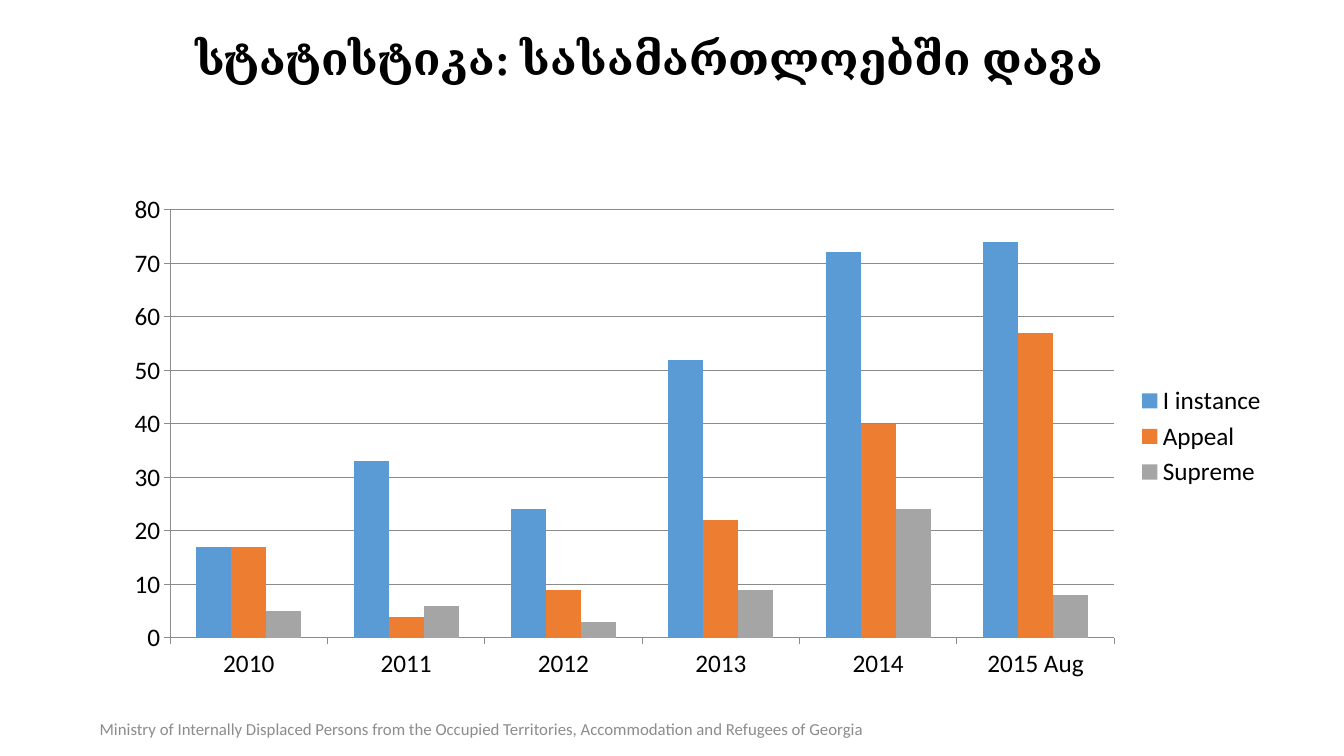
from dataclasses import dataclass

from lxml.etree import SubElement
from pptx import Presentation
from pptx.chart.chart import Chart
from pptx.chart.data import CategoryChartData
from pptx.dml.color import RGBColor
from pptx.enum.chart import XL_CHART_TYPE as ChartType, XL_LEGEND_POSITION as LegendPos
from pptx.enum.chart import XL_TICK_MARK as Tick
from pptx.enum.text import MSO_ANCHOR as Anchor, MSO_AUTO_SIZE as AutoSize, PP_ALIGN as Align
from pptx.oxml.ns import qn
from pptx.util import Inches, Pt

COLORS = {
    "text": "000000",
    "footer": "8C8C8C",
    "grid": "8B8B8B",
    "first": "5B9BD5",
    "appeal": "ED7D31",
    "supreme": "A5A5A5",
}
YEARS = ("2010", "2011", "2012", "2013", "2014", "2015 Aug")


@dataclass(frozen=True)
class Court:
    name: str
    cases: tuple[int, ...]
    color: str


COURTS = (
    Court("I instance", (17, 33, 24, 52, 72, 74), "first"),
    Court("Appeal", (17, 4, 9, 22, 40, 57), "appeal"),
    Court("Supreme", (5, 6, 3, 9, 24, 8), "supreme"),
)


def rgb(name: str) -> RGBColor:
    return RGBColor.from_string(COLORS[name])


def box(left: float, top: float, width: float, height: float) -> tuple:
    return tuple(Inches(v) for v in (left, top, width, height))


def write(sp, text: str, *, size: float, color: str, font: str = "Calibri",
          bold: bool = False, align=Align.LEFT) -> None:
    tf = sp.text_frame
    tf.word_wrap = True
    tf.auto_size = AutoSize.NONE
    tf.vertical_anchor = Anchor.TOP
    p = tf.paragraphs[0]
    p.alignment = align
    r = p.add_run()
    r.text = text
    r.font.size = Pt(size)
    r.font.name = font
    r.font.bold = bold
    r.font.color.rgb = rgb(color)


def set_plot_area(chart: Chart, **fractions: float) -> None:
    """Fix the inner plot area, as fractions of the chart frame."""
    area = chart.element.find(".//" + qn("c:plotArea"))
    layout = area.find(qn("c:layout"))
    if layout is None:
        layout = SubElement(area, qn("c:layout"))
        area.insert(0, layout)
    manual = SubElement(layout, qn("c:manualLayout"))
    settings = {"layoutTarget": "inner", "xMode": "edge", "yMode": "edge", **fractions}
    for tag, value in settings.items():
        SubElement(manual, qn(f"c:{tag}")).set("val", str(value))


def add_court_chart(slide) -> None:
    data = CategoryChartData()
    data.categories = YEARS
    for court in COURTS:
        data.add_series(court.name, court.cases)
    chart = slide.shapes.add_chart(
        ChartType.COLUMN_CLUSTERED, *box(1.11, 1.83, 11.56, 5), data).chart
    chart.has_title = False
    chart.font.size = Pt(18)
    chart.font.name = "Calibri"
    chart.font.color.rgb = rgb("text")

    chart.has_legend = True
    chart.legend.position = LegendPos.RIGHT
    chart.legend.include_in_layout = False

    plot = chart.plots[0]
    plot.gap_width = 150
    plot.overlap = 0
    plot.vary_by_categories = False
    for series, court in zip(plot.series, COURTS):
        series.format.fill.solid()
        series.format.fill.fore_color.rgb = rgb(court.color)

    values = chart.value_axis
    values.minimum_scale, values.maximum_scale, values.major_unit = 0, 80, 10
    values.has_major_gridlines = True
    for axis in (chart.category_axis, values):
        axis.major_tick_mark = Tick.OUTSIDE
        axis.minor_tick_mark = Tick.NONE
    for item in (chart.category_axis, values, values.major_gridlines):
        item.format.line.color.rgb = rgb("grid")
        item.format.line.width = Pt(0.75)
    set_plot_area(chart, x=0.05, y=0.05, w=0.81, h=0.85)


def main() -> None:
    prs = Presentation()
    prs.slide_width, prs.slide_height = Inches(13.33), Inches(7.5)
    slide = prs.slides.add_slide(prs.slide_layouts[5])

    title = slide.shapes.title
    title.left, title.top, title.width, title.height = box(1.11, 0.25, 10.78, 1.58)
    write(title, "სტატისტიკა: სასამართლოებში დავა ", size=32, color="text",
          font="Times New Roman", bold=True, align=Align.CENTER)

    add_court_chart(slide)

    footer = slide.shapes.add_textbox(*box(0.89, 7.08, 11.89, 0.42))
    write(footer, "Ministry of Internally Displaced Persons from the Occupied Territories, "
          "Accommodation and Refugees of Georgia",
          size=12, color="footer", align=Align.JUSTIFY)

    prs.save("out.pptx")


if __name__ == "__main__":
    main()
